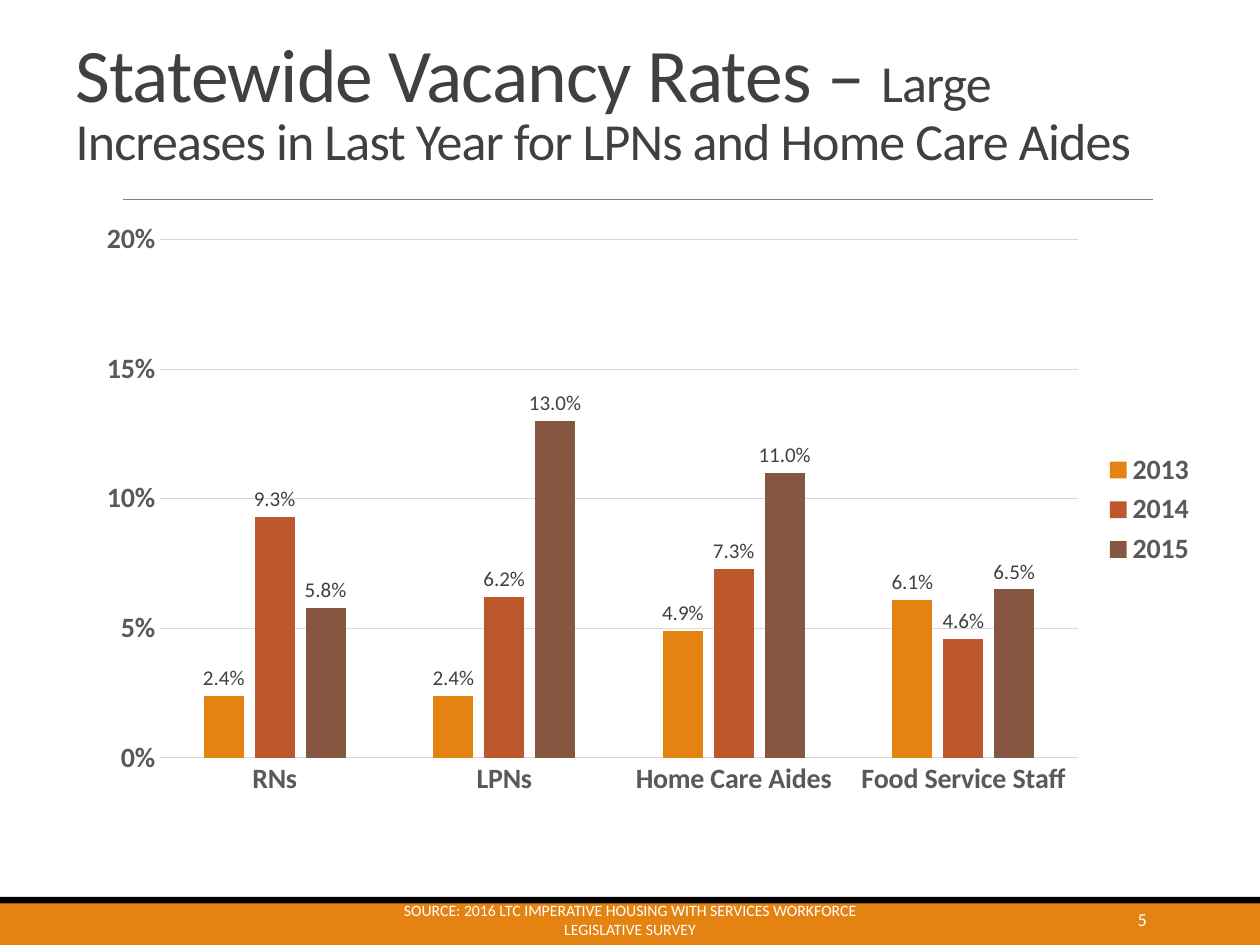
from lxml import etree
from pptx import Presentation
from pptx.chart.data import CategoryChartData
from pptx.dml.color import RGBColor
from pptx.enum.chart import XL_CHART_TYPE, XL_LEGEND_POSITION, XL_LABEL_POSITION, XL_TICK_MARK
from pptx.enum.shapes import MSO_CONNECTOR, MSO_SHAPE
from pptx.enum.text import MSO_ANCHOR, MSO_AUTO_SIZE, PP_ALIGN
from pptx.oxml.ns import qn
from pptx.util import Inches, Pt

WIDTH, HEIGHT = 10, 7.5
FONT = "Calibri"
ORANGE, RUST, BROWN = "E48312", "BD582C", "865640"
DARK, GRAY, PALE, RULE = "404040", "595959", "D9D9D9", "808080"
WHITE, BLACK = "FFFFFF", "000000"
BAND_TOP = 0.95 * HEIGHT

CATEGORIES = ["RNs", "LPNs", "Home Care Aides", "Food Service Staff"]
SERIES = [
    ("2013", ORANGE, (0.024, 0.024, 0.049, 0.061)),
    ("2014", RUST, (0.093, 0.062, 0.073, 0.046)),
    ("2015", BROWN, (0.058, 0.13, 0.11, 0.065)),
]


def rgb(value):
    return RGBColor.from_string(value)


def box(left, top, width, height):
    """Convert shares of the slide's size to lengths."""
    return (Inches(left * WIDTH), Inches(top * HEIGHT),
            Inches(width * WIDTH), Inches(height * HEIGHT))


def set_font(font, size, color, bold=False):
    font.name, font.size, font.bold = FONT, Pt(size), bold
    font.color.rgb = rgb(color)


def set_line(line, color, width):
    line.color.rgb = rgb(color)
    line.width = Pt(width)


def add_bar(slide, top, height, color):
    """Draw a plain bar across the full width of the slide."""
    s = slide.shapes.add_shape(MSO_SHAPE.RECTANGLE, *box(0, top, 1, height))
    s.shadow.inherit = False
    s.fill.solid()
    s.fill.fore_color.rgb = rgb(color)
    s.line.fill.background()


def add_rule(slide, left, right, y, color):
    x1, y1, x2, _ = box(left, y, right, 0)
    s = slide.shapes.add_connector(MSO_CONNECTOR.STRAIGHT, x1, y1, x2, y1)
    set_line(s.line, color, 0.5)
    etree.SubElement(s._element.spPr, qn("a:effectLst"))


def add_title(slide, parts):
    s = slide.shapes.title
    s.left, s.top, s.width, s.height = box(0.05, 0.042, 0.865, 0.146)
    tf = s.text_frame
    tf.auto_size = MSO_AUTO_SIZE.NONE
    tf.word_wrap = True
    tf.vertical_anchor = MSO_ANCHOR.BOTTOM
    p = tf.paragraphs[0]
    p.alignment = PP_ALIGN.LEFT
    p.line_spacing = 0.85
    for text, size in parts:
        r = p.add_run()
        r.text = text
        set_font(r.font, size, DARK)
        r.font._element.set("spc", "-50")


def add_footer(slide, left, width, text, size, align):
    s = slide.shapes.add_textbox(*box(left, 0.951, width, 0.044))
    tf = s.text_frame
    tf.word_wrap = True
    tf.vertical_anchor = MSO_ANCHOR.MIDDLE
    p = tf.paragraphs[0]
    p.text = text
    p.alignment = align
    set_font(p.font, size, WHITE)


def format_axis(axis):
    axis.major_tick_mark = axis.minor_tick_mark = XL_TICK_MARK.NONE
    set_font(axis.tick_labels.font, 16, GRAY, bold=True)


def format_series(series, color):
    series.format.fill.solid()
    series.format.fill.fore_color.rgb = rgb(color)
    series.invert_if_negative = False
    labels = series.data_labels
    labels.show_value = True
    labels.number_format = "0.0%"
    labels.number_format_is_linked = False
    labels.position = XL_LABEL_POSITION.OUTSIDE_END
    set_font(labels.font, 12, DARK)


def add_vacancy_chart(slide):
    data = CategoryChartData(number_format="0.0%")
    data.categories = CATEGORIES
    for name, _, values in SERIES:
        data.add_series(name, values)
    chart = slide.shapes.add_chart(
        XL_CHART_TYPE.COLUMN_CLUSTERED, *box(0.067, 0.223, 0.892, 0.633), data).chart
    set_font(chart.font, 10, BLACK)
    chart.has_title = False
    chart.has_legend = True
    chart.legend.position = XL_LEGEND_POSITION.RIGHT
    chart.legend.include_in_layout = False
    set_font(chart.legend.font, 16, GRAY, bold=True)

    format_axis(chart.category_axis)
    set_line(chart.category_axis.format.line, PALE, 0.75)

    rates = chart.value_axis
    format_axis(rates)
    rates.minimum_scale, rates.maximum_scale, rates.major_unit = 0, 0.2, 0.05
    rates.tick_labels.number_format = "0%"
    rates.tick_labels.number_format_is_linked = False
    rates.format.line.fill.background()
    set_line(rates.major_gridlines.format.line, PALE, 0.75)

    plot = chart.plots[0]
    plot.gap_width, plot.overlap = 219, -27
    plot.vary_by_categories = False
    for series, (_, color, _) in zip(plot.series, SERIES):
        format_series(series, color)


def main():
    prs = Presentation()
    prs.slide_width, prs.slide_height = Inches(WIDTH), Inches(HEIGHT)
    slide = prs.slides.add_slide(prs.slide_layouts[5])

    band = BAND_TOP / HEIGHT
    add_bar(slide, band, 1 - band, ORANGE)
    add_bar(slide, band - 0.001, 0.007, BLACK)
    add_rule(slide, 0.098, 0.915, 0.211, RULE)
    add_title(slide, [
        ("Statewide Vacancy Rates – ", 43.2),
        ("Large Increases in Last Year for LPNs and Home Care Aides", 29.7),
    ])
    add_vacancy_chart(slide)
    add_footer(slide, 0.812, 0.108, "5", 10.5, PP_ALIGN.RIGHT)
    add_footer(slide, 0.302, 0.396,
               "SOURCE: 2016 LTC IMPERATIVE HOUSING WITH SERVICES WORKFORCE LEGISLATIVE SURVEY",
               9, PP_ALIGN.CENTER)
    prs.save("out.pptx")


if __name__ == "__main__":
    main()
